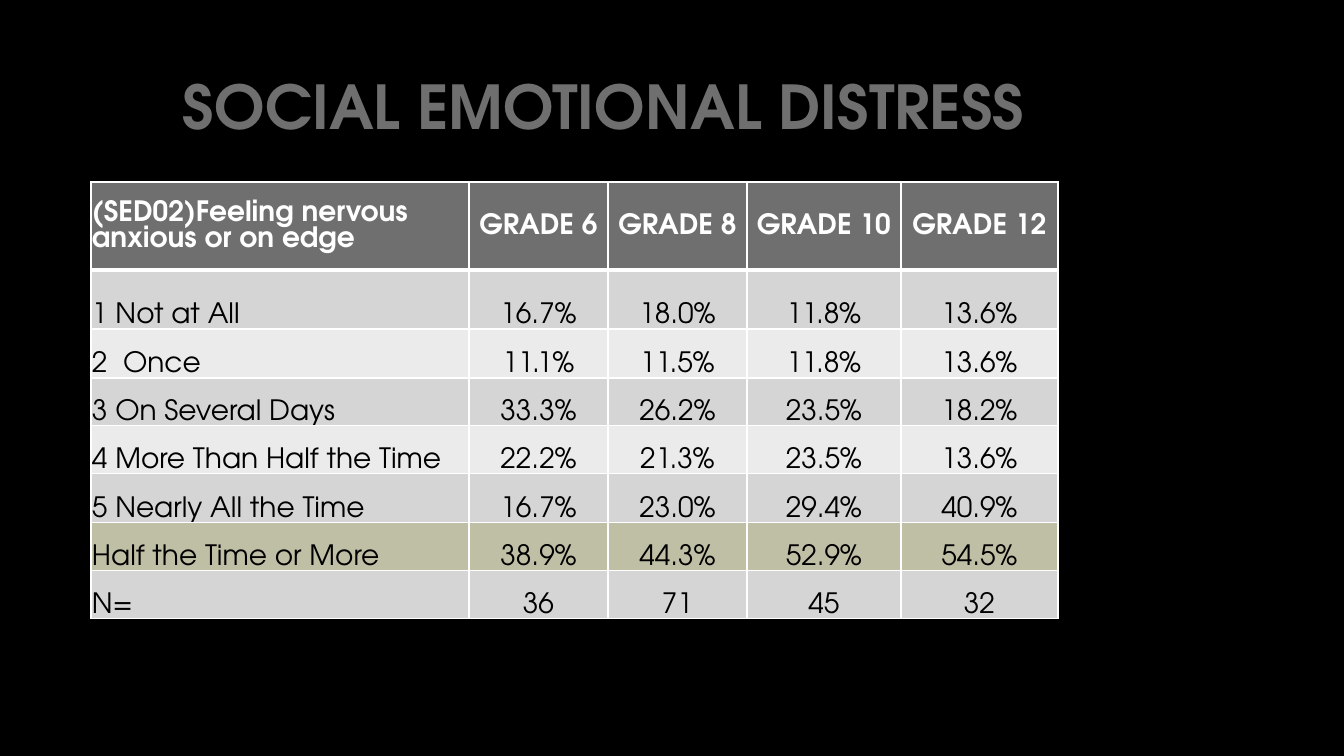
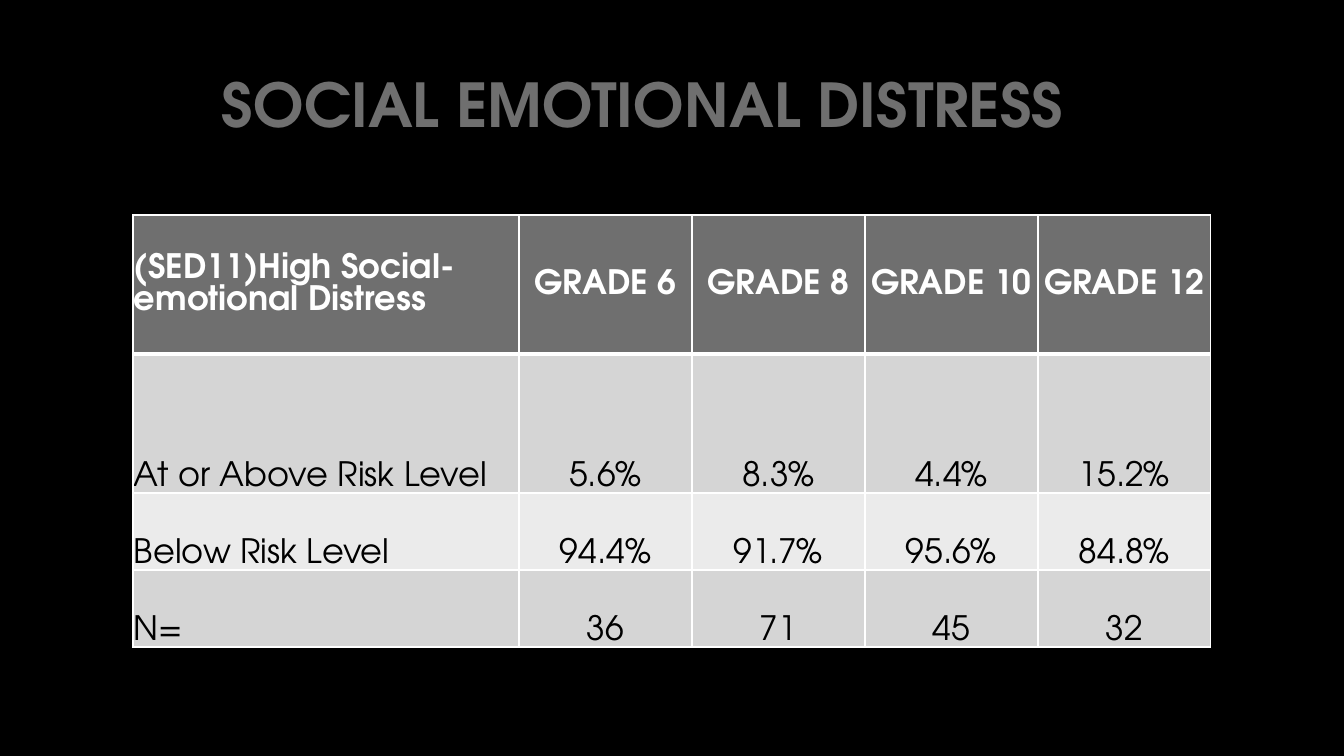
from dataclasses import dataclass

from lxml import etree
from pptx import Presentation
from pptx.dml.color import RGBColor
from pptx.enum.text import MSO_ANCHOR, PP_ALIGN
from pptx.oxml.ns import qn
from pptx.util import Emu, Pt

LEFT, CENTER = PP_ALIGN.LEFT, PP_ALIGN.CENTER
MIDDLE, BOTTOM = MSO_ANCHOR.MIDDLE, MSO_ANCHOR.BOTTOM
PX_PER_INCH = 100.8
EMU_PER_PX = 914400 / PX_PER_INCH
BLANK_LAYOUT = 6


@dataclass(frozen=True)
class Theme:
    font: str = "TeX Gyre Adventor"
    background: str = "000000"
    title: str = "6F6F6F"
    header_fill: str = "6F6F6F"
    header_text: str = "FFFFFF"
    body_text: str = "000000"
    bands: tuple = ("D5D5D5", "EBEBEB")
    highlight: str = "BFBFA5"
    border: str = "FFFFFF"
    border_width: float = 1
    header_rule: float = 3
    title_size: float = 43.2
    line_height: float = 0.93


THEME = Theme()
SLIDE_SIZE = (1344, 756)
TITLE = "SOCIAL EMOTIONAL DISTRESS"
TITLE_SIZE = (913, 121)
GRADES = ("GRADE 6", "GRADE 8", "GRADE 10", "GRADE 12")
COUNTS = ("N=", "36", "71", "45", "32")
HIGHLIGHTED = "Half the Time or More"

SLIDES = [
    {
        "title_at": (147, 26),
        "table_at": (91, 182),
        "columns": [378, 139, 139, 154, 157],
        "heights": [88, 59] + [49, 48, 48] * 2,
        "size": 20,
        "rows": [
            ("(SED02)Feeling nervous anxious or on edge", *GRADES),
            ("1 Not at All", "16.7%", "18.0%", "11.8%", "13.6%"),
            ("2  Once", "11.1%", "11.5%", "11.8%", "13.6%"),
            ("3 On Several Days", "33.3%", "26.2%", "23.5%", "18.2%"),
            ("4 More Than Half the Time", "22.2%", "21.3%", "23.5%", "13.6%"),
            ("5 Nearly All the Time", "16.7%", "23.0%", "29.4%", "40.9%"),
            (HIGHLIGHTED, "38.9%", "44.3%", "52.9%", "54.5%"),
            COUNTS,
        ],
    },
    {
        "title_at": (186, 24),
        "table_at": (133, 215),
        "columns": [386] + [173] * 4,
        "heights": [139, 139, 77, 77],
        "size": 24,
        "rows": [
            ("(SED11)High Social-emotional Distress", *GRADES),
            ("At or Above Risk Level", "5.6%", "8.3%", "4.4%", "15.2%"),
            ("Below Risk Level", "94.4%", "91.7%", "95.6%", "84.8%"),
            COUNTS,
        ],
    },
]


def px(length):
    return Emu(round(length * EMU_PER_PX))


def style_paragraph(para, size, color, bold, align):
    para.alignment = align
    para.font.name = THEME.font
    para.font.size = Pt(size)
    para.font.bold = bold
    para.font.color.rgb = RGBColor.from_string(color)


def add_title(page, position):
    box = page.shapes.add_textbox(*map(px, position + TITLE_SIZE))
    frame = box.text_frame
    frame.word_wrap = True
    frame.vertical_anchor = BOTTOM
    frame.text = TITLE
    style_paragraph(frame.paragraphs[0], THEME.title_size, THEME.title, True, CENTER)


def set_borders(cell, row_index):
    widths = dict.fromkeys(("a:lnL", "a:lnR", "a:lnT", "a:lnB"), THEME.border_width)
    if row_index == 0:
        widths["a:lnB"] = THEME.header_rule
    elif row_index == 1:
        widths["a:lnT"] = THEME.header_rule
    properties = cell._tc.get_or_add_tcPr()
    for index, (tag, width) in enumerate(widths.items()):
        line = etree.Element(qn(tag), w=str(Pt(width)))
        fill = etree.SubElement(line, qn("a:solidFill"))
        etree.SubElement(fill, qn("a:srgbClr"), val=THEME.border)
        properties.insert(index, line)


def row_fill(row_index, label):
    if row_index == 0:
        return THEME.header_fill
    if label == HIGHLIGHTED:
        return THEME.highlight
    return THEME.bands[(row_index - 1) % len(THEME.bands)]


def fill_cell(cell, text, row_index, column_index, fill, size):
    is_header = row_index == 0
    cell.margin_left = cell.margin_right = cell.margin_top = px(1)
    cell.margin_bottom = 0
    cell.vertical_anchor = MIDDLE if is_header else BOTTOM
    cell.fill.solid()
    cell.fill.fore_color.rgb = RGBColor.from_string(fill)
    set_borders(cell, row_index)
    cell.text = text
    para = cell.text_frame.paragraphs[0]
    para.line_spacing = Pt(round(size * THEME.line_height, 1))
    color = THEME.header_text if is_header else THEME.body_text
    align = CENTER if column_index else LEFT
    style_paragraph(para, size, color, is_header, align)


def add_grade_table(page, content):
    rows, columns, heights = content["rows"], content["columns"], content["heights"]
    bounds = content["table_at"] + (sum(columns), sum(heights))
    table = page.shapes.add_table(len(rows), len(columns), *map(px, bounds)).table
    table.first_row = table.horz_banding = False
    for column, width in zip(table.columns, columns):
        column.width = px(width)
    for row_index, values in enumerate(rows):
        table.rows[row_index].height = px(heights[row_index])
        fill = row_fill(row_index, values[0])
        for column_index, text in enumerate(values):
            cell = table.cell(row_index, column_index)
            fill_cell(cell, text, row_index, column_index, fill, content["size"])


def main():
    deck = Presentation()
    deck.slide_width, deck.slide_height = map(px, SLIDE_SIZE)
    background = deck.slide_master.background.fill
    background.solid()
    background.fore_color.rgb = RGBColor.from_string(THEME.background)
    for content in SLIDES:
        page = deck.slides.add_slide(deck.slide_layouts[BLANK_LAYOUT])
        add_title(page, content["title_at"])
        add_grade_table(page, content)
    deck.save("out.pptx")


if __name__ == "__main__":
    main()
